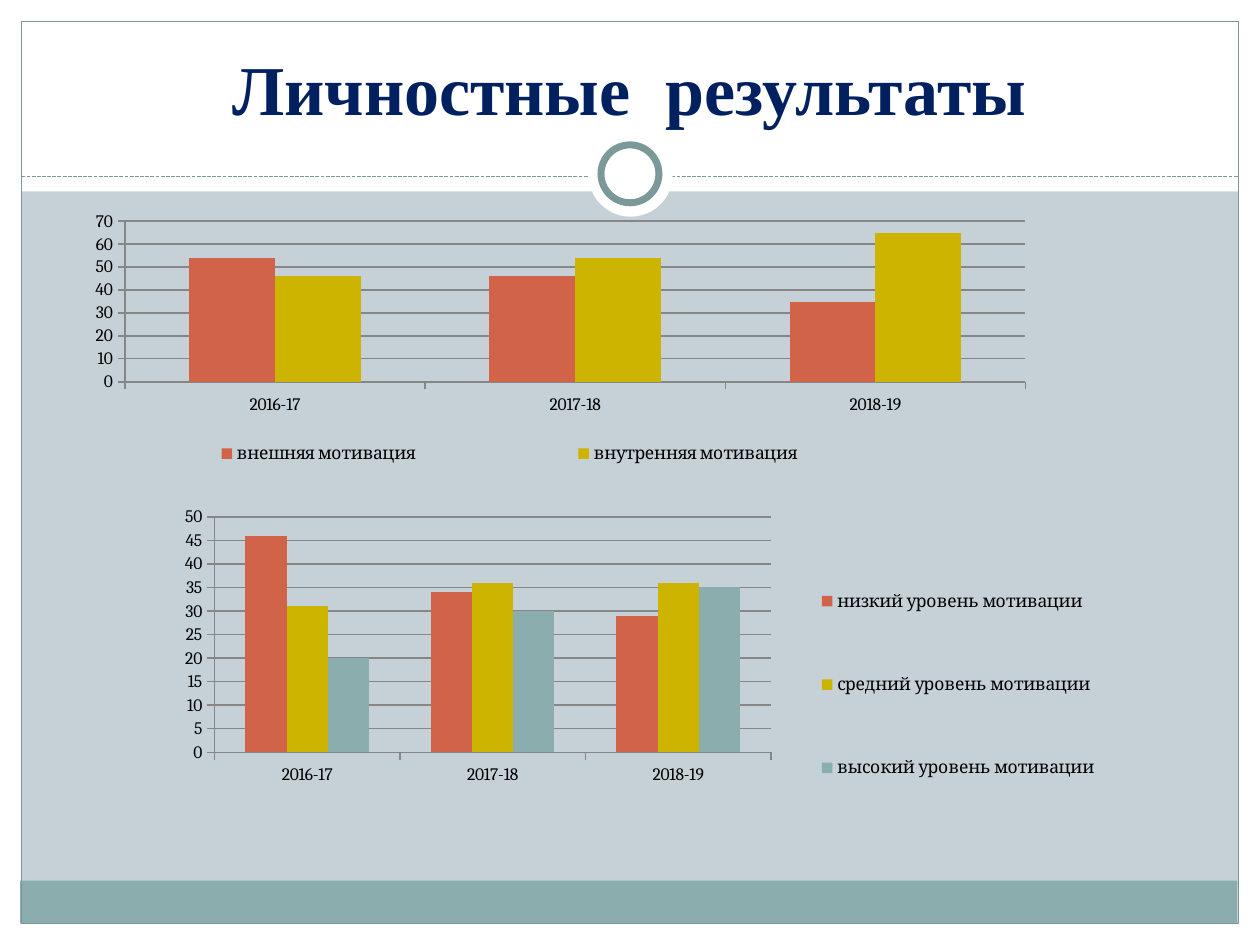
from dataclasses import dataclass

from lxml import etree
from pptx import Presentation
from pptx.chart.data import CategoryChartData
from pptx.dml.color import RGBColor
from pptx.enum.chart import XL_CHART_TYPE, XL_LEGEND_POSITION, XL_TICK_LABEL_POSITION, XL_TICK_MARK
from pptx.enum.dml import MSO_LINE
from pptx.enum.shapes import MSO_CONNECTOR, MSO_SHAPE
from pptx.enum.text import MSO_ANCHOR, PP_ALIGN
from pptx.oxml.ns import qn
from pptx.util import Inches, Pt

RECT, OVAL = MSO_SHAPE.RECTANGLE, MSO_SHAPE.OVAL
COLUMNS = XL_CHART_TYPE.COLUMN_CLUSTERED
BOTTOM, RIGHT = XL_LEGEND_POSITION.BOTTOM, XL_LEGEND_POSITION.RIGHT
TICK_OUT = XL_TICK_MARK.OUTSIDE
LABEL_LOW = XL_TICK_LABEL_POSITION.LOW

WHITE = RGBColor(0xFF, 0xFF, 0xFF)
BLACK = RGBColor(0, 0, 0)
BACKGROUND = RGBColor(0xC5, 0xD1, 0xD7)
TEAL = RGBColor(0x8C, 0xAD, 0xAE)
FRAME = RGBColor(0x7C, 0x99, 0x9A)
NAVY = RGBColor(0x00, 0x20, 0x60)
GREY = RGBColor(0x86, 0x86, 0x86)
SERIES_COLORS = (RGBColor(0xD1, 0x63, 0x49), RGBColor(0xCC, 0xB4, 0x00), TEAL)

YEARS = ("2016-17", "2017-18", "2018-19")
Box = tuple[float, float, float, float]


@dataclass
class Panel:
    box: Box
    fill: RGBColor | None = None
    line: RGBColor | None = None
    weight: float = 0.75
    kind: int = RECT


@dataclass
class ColumnChart:
    box: Box
    series: dict[str, tuple[float, ...]]
    plot: Box
    legend: Box
    legend_side: int


PANELS = (
    Panel((0, 7.33, 10, 0.17), WHITE),
    Panel((0, 0, 10, 1.52), WHITE),
    Panel((0, 0, 0.17, 7.5), WHITE),
    Panel((9.83, 0, 0.17, 7.5), WHITE),
    Panel((0.16, 6.99, 9.66, 0.34), TEAL),
    Panel((0.17, 0.17, 9.66, 7.16), None, FRAME),
)
RINGS = (
    Panel((4.67, 1.05, 0.67, 0.67), WHITE, kind=OVAL),
    Panel((4.77, 1.15, 0.46, 0.46), WHITE, FRAME, 4, OVAL),
)
CHARTS = (
    ColumnChart(
        (0.43, 1.55, 8.03, 2.28),
        {"внешняя мотивация": (54, 46, 35), "внутренняя мотивация": (46, 54, 65)},
        plot=(0.07, 0.09, 0.89, 0.56), legend=(0.01, 0.82, 0.88, 0.16), legend_side=BOTTOM,
    ),
    ColumnChart(
        (1.14, 3.99, 8.03, 2.83),
        {
            "низкий уровень мотивации": (46, 34, 29),
            "средний уровень мотивации": (31, 36, 36),
            "высокий уровень мотивации": (20, 30, 35),
        },
        plot=(0.07, 0.04, 0.55, 0.66), legend=(0.66, 0.07, 0.29, 0.88), legend_side=RIGHT,
    ),
)


def set_values(target, values: dict) -> None:
    for name, value in values.items():
        setattr(target, name, value)


def draw_panel(page, panel: Panel) -> None:
    shape = page.shapes.add_shape(panel.kind, *map(Inches, panel.box))
    shape.shadow.inherit = False
    if panel.fill is None:
        shape.fill.background()
    else:
        shape.fill.solid()
        shape.fill.fore_color.rgb = panel.fill
    if panel.line is None:
        shape.line.fill.background()
    else:
        shape.line.color.rgb = panel.line
        shape.line.width = Pt(panel.weight)


def draw_divider(page) -> None:
    divider = page.shapes.add_connector(
        MSO_CONNECTOR.STRAIGHT, Inches(0.17), Inches(1.4), Inches(9.83), Inches(1.4))
    divider.line.color.rgb = FRAME
    set_values(divider.line, {"width": Pt(0.75), "dash_style": MSO_LINE.SQUARE_DOT})
    etree.SubElement(divider._element.spPr, qn("a:effectLst"))


def draw_title(page, text: str) -> None:
    box = page.shapes.add_textbox(*map(Inches, (0.33, 0.25, 9.33, 0.83)))
    set_values(box.text_frame, {"word_wrap": True, "vertical_anchor": MSO_ANCHOR.BOTTOM})
    para = box.text_frame.paragraphs[0]
    para.alignment = PP_ALIGN.CENTER
    span = para.add_run()
    span.text = text
    set_values(span.font, {"name": "Times New Roman", "size": Pt(40), "bold": True})
    span.font.color.rgb = NAVY


def place_part(part, box: Box, inner: bool = False) -> None:
    """Fix a chart part at fractions of the chart area."""
    layout = part.find(qn("c:layout"))
    if layout is None:
        layout = etree.Element(qn("c:layout"))
        if inner:
            part.insert(0, layout)
        else:
            part.find(qn("c:legendPos")).addnext(layout)
    manual = etree.SubElement(layout, qn("c:manualLayout"))
    settings = [("layoutTarget", "inner")] if inner else []
    settings += [("xMode", "edge"), ("yMode", "edge")]
    settings += zip("xywh", map(str, box))
    for tag, value in settings:
        etree.SubElement(manual, qn(f"c:{tag}")).set("val", value)


def draw_chart(page, item: ColumnChart) -> None:
    data = CategoryChartData()
    data.categories = YEARS
    for name, values in item.series.items():
        data.add_series(name, values)
    chart = page.shapes.add_chart(COLUMNS, *map(Inches, item.box), data).chart
    set_values(chart, {"has_title": False, "has_legend": True})
    set_values(chart.font, {"name": "Cambria", "size": Pt(10)})
    chart.font.color.rgb = BLACK
    set_values(chart.legend, {"position": item.legend_side, "include_in_layout": False})

    plot = chart.plots[0]
    set_values(plot, {"gap_width": 150, "overlap": 0, "vary_by_categories": False})
    for series, color in zip(plot.series, SERIES_COLORS):
        series.format.fill.solid()
        series.format.fill.fore_color.rgb = color

    chart.category_axis.tick_label_position = LABEL_LOW
    chart.value_axis.has_major_gridlines = True
    for axis in (chart.category_axis, chart.value_axis):
        axis.major_tick_mark = TICK_OUT
    for part in (chart.category_axis, chart.value_axis, chart.value_axis.major_gridlines):
        part.format.line.color.rgb = GREY
        part.format.line.width = Pt(0.75)

    plot_area = chart._chartSpace.chart.plotArea
    place_part(plot_area, item.plot, inner=True)
    place_part(chart.legend._element, item.legend)


def main() -> None:
    deck = Presentation()
    set_values(deck, {"slide_width": Inches(10), "slide_height": Inches(7.5)})
    page = deck.slides.add_slide(deck.slide_layouts[6])
    page.background.fill.solid()
    page.background.fill.fore_color.rgb = BACKGROUND
    for panel in PANELS:
        draw_panel(page, panel)
    draw_divider(page)
    for ring in RINGS:
        draw_panel(page, ring)
    draw_title(page, "Личностные  результаты")
    for item in CHARTS:
        draw_chart(page, item)
    deck.save("out.pptx")


if __name__ == "__main__":
    main()
